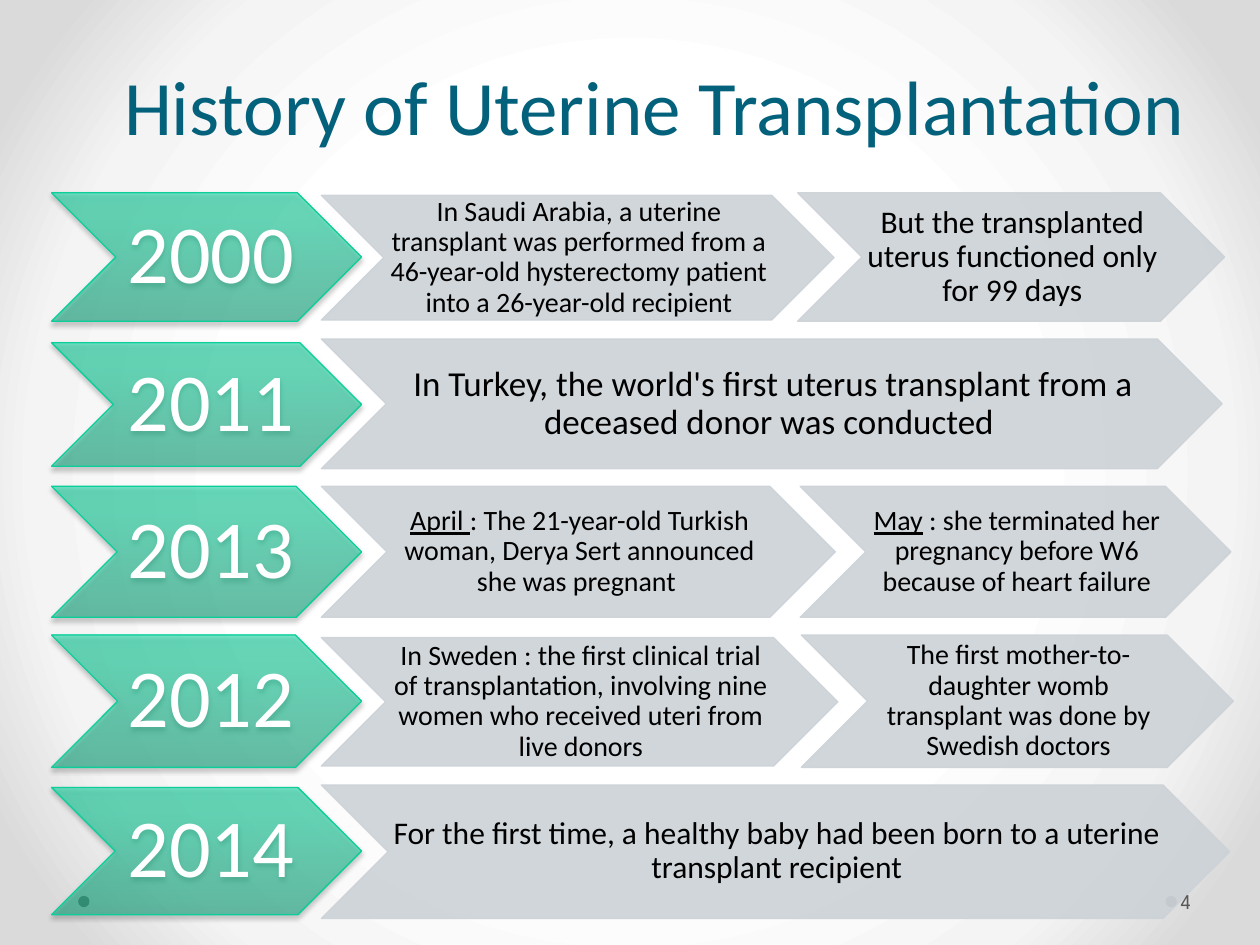
import pptx
import pptx.util
import pptx.oxml
import pptx.oxml.ns
import pptx.dml.color
import pptx.enum.shapes
import pptx.enum.text
import lxml.etree

Inches = pptx.util.Inches
Pt = pptx.util.Pt
qn = pptx.oxml.ns.qn
SHAPE = pptx.enum.shapes.MSO_SHAPE
ALIGN = pptx.enum.text.PP_ALIGN
ANCHOR = pptx.enum.text.MSO_ANCHOR

HUES = {
    "title": "04617B", "edge": "0BCF9A", "step": "CCD2D7", "dot": "808080",
    "white": "FFFFFF", "black": "000000", "number": "595959",
}
GLOW = [(0, "FFFFFF"), (50, "FFFFFF"), (76, "F4F4F4"), (92, "DADADA"), (100, "DADADA")]
GREEN = [(0, "00A679"), (80, "00D89D"), (100, "00D99E")]
LEFT, YEAR_W, STEP_X = 0.41, 2.46, 2.55

# Year, top, height, then steps: left, top, width, height, size, runs (text, underlined)
ROWS = [
    ("2000", 1.53, 1.02, [
        (STEP_X, 1.55, 4.07, 0.99, 16, [
            ("In Saudi Arabia, a uterine transplant was performed from a "
             "46-year-old hysterectomy patient into a 26-year-old recipient", False)]),
        (6.33, 1.53, 3.39, 1.02, 18, [
            ("But the transplanted uterus functioned only for 99 days", False)])]),
    ("2011", 2.72, 0.98, [
        (STEP_X, 2.69, 7.15, 1.03, 20, [
            ("In Turkey, the world's first uterus transplant from a "
             "deceased donor was conducted ", False)])]),
    ("2013", 3.86, 1.04, [
        (STEP_X, 3.86, 4.08, 1.04, 16, [
            ("April ", True),
            (": The 21-year-old Turkish woman, Derya Sert announced "
             "she was pregnant ", False)]),
        (6.35, 3.86, 3.42, 1.04, 16, [
            ("May", True),
            (" : she terminated her pregnancy before W6 because of heart failure", False)])]),
    ("2012", 5.04, 1.05, [
        (STEP_X, 5.06, 4.1, 1.02, 16, [
            ("In Sweden : the first clinical trial of transplantation, involving "
             "nine women who received uteri from live donors", False)]),
        (6.36, 5.04, 3.43, 1.05, 16, [
            ("The first mother-to-daughter womb transplant was done by "
             "Swedish doctors", False)])]),
    ("2014", 6.25, 1.01, [
        (STEP_X, 6.23, 7.21, 1.06, 18, [
            ("For the first time, a healthy baby had been born to a uterine "
             "transplant recipient", False)])]),
]


def rgb(name):
    return pptx.dml.color.RGBColor.from_string(HUES[name])


def add(parent, tag, **attrs):
    node = lxml.etree.SubElement(parent, qn(tag))
    for key, value in attrs.items():
        node.set(key, str(value))
    return node


def blend(parent, stops, alpha=100, angle=None):
    """Swap the solid fill in parent for a linear or circular gradient."""
    old = parent.find(qn("a:solidFill"))
    grad = pptx.oxml.parse_xml(
        f'<a:gradFill {pptx.oxml.ns.nsdecls("a")} rotWithShape="1"/>')
    points = add(grad, "a:gsLst")
    for pos, hue in stops:
        color = add(add(points, "a:gs", pos=pos * 1000), "a:srgbClr", val=hue)
        if alpha < 100:
            add(color, "a:alpha", val=alpha * 1000)
    if angle is None:
        ring = add(grad, "a:path", path="circle")
        add(ring, "a:fillToRect", l=50000, t=50000, r=50000, b=50000)
    else:
        add(grad, "a:lin", ang=angle * 60000, scaled=0)
    parent.replace(old, grad)


class Deck:
    font = "Calibri"

    def __init__(self):
        self.prs = pptx.Presentation()
        self.prs.slide_width, self.prs.slide_height = Inches(10), Inches(7.5)
        self.slide = self.prs.slides.add_slide(self.prs.slide_layouts[5])

    def backdrop(self):
        self.slide.background.fill.solid()
        self.slide.background.fill.fore_color.rgb = rgb("white")
        blend(self.slide.element.cSld.find(qn("p:bg")).find(qn("p:bgPr")), GLOW)

    def text(self, frame, runs, size, hue, font=None, align=ALIGN.CENTER, gap=0.9,
             inset=(0, 0, 0, 0), anchor=ANCHOR.MIDDLE, wrap=True):
        frame.word_wrap = wrap
        frame.auto_size = pptx.enum.text.MSO_AUTO_SIZE.NONE
        frame.vertical_anchor = anchor
        (frame.margin_left, frame.margin_top,
         frame.margin_right, frame.margin_bottom) = map(Inches, inset)
        para = frame.paragraphs[0]
        para.alignment, para.line_spacing = align, gap
        for words, under in runs:
            run = para.add_run()
            run.text = words
            run.font.name, run.font.size = font or self.font, Pt(size)
            run.font.color.rgb = rgb(hue)
            if under:
                run.font.underline = True

    def title(self, words, box):
        shape = self.slide.shapes.title
        shape.left, shape.top, shape.width, shape.height = map(Inches, box)
        self.text(shape.text_frame, [(words, False)], 44, "title", gap=Pt(58),
                  inset=(0.1, 0.05, 0.1, 0.05), anchor=ANCHOR.BOTTOM)

    def shape(self, kind, box, fill, line=None):
        shape = self.slide.shapes.add_shape(kind, *map(Inches, box))
        shape.shadow.inherit = False
        shape.fill.solid()
        shape.fill.fore_color.rgb = rgb(fill)
        if line:
            shape.line.color.rgb = rgb(line)
            shape.line.width = Pt(0.75)
        else:
            shape.line.fill.background()
        return shape

    def dot(self, x, y):
        self.shape(SHAPE.OVAL, (x, y, 0.09, 0.09), "dot")

    def year(self, words, top, height):
        shape = self.shape(SHAPE.CHEVRON, (LEFT, top, YEAR_W, height), "edge", "edge")
        props = shape.element.spPr
        blend(props, GREEN, alpha=51, angle=270)
        shade = add(props.find(qn("a:effectLst")), "a:outerShdw", blurRad=Pt(3.1),
                    dist=Pt(1.8), dir=90 * 60000, rotWithShape=0)
        add(add(shade, "a:srgbClr", val=HUES["black"]), "a:alpha", val=35000)
        self.text(shape.text_frame, [(words, False)], 47, "white",
                  inset=(0.07, 0.03, 0, 0.03), wrap=False)

    def step(self, x, y, width, height, size, runs):
        shape = self.shape(SHAPE.CHEVRON, (x, y, width, height), "step", "step")
        for color in list(shape.element.spPr.iter(qn("a:srgbClr"))):
            add(color, "a:alpha", val=90000)
        self.text(shape.text_frame, runs, size, "black", inset=(0.02, 0.01, 0, 0.01))

    def number(self, words, box):
        frame = self.slide.shapes.add_textbox(*map(Inches, box)).text_frame
        self.text(frame, [(words, False)], 12, "number", font="League Spartan",
                  align=ALIGN.LEFT, gap=1.0, inset=(0.03, 0.05, 0.05, 0.05))


def main():
    deck = Deck()
    # Background, corner dots and title
    deck.backdrop()
    for x in (9.25, 0.62):
        deck.dot(x, 7.11)
    deck.title("History of Uterine Transplantation", (0.51, -0.5, 9.37, 1.75))
    # Timeline: one row of chevrons per year
    for year, top, height, steps in ROWS:
        deck.year(year, top, height)
        for step in steps:
            deck.step(*step)
    # Slide number
    deck.number("4", (9.34, 6.95, 0.61, 0.4))
    deck.prs.save("out.pptx")


if __name__ == "__main__":
    main()
